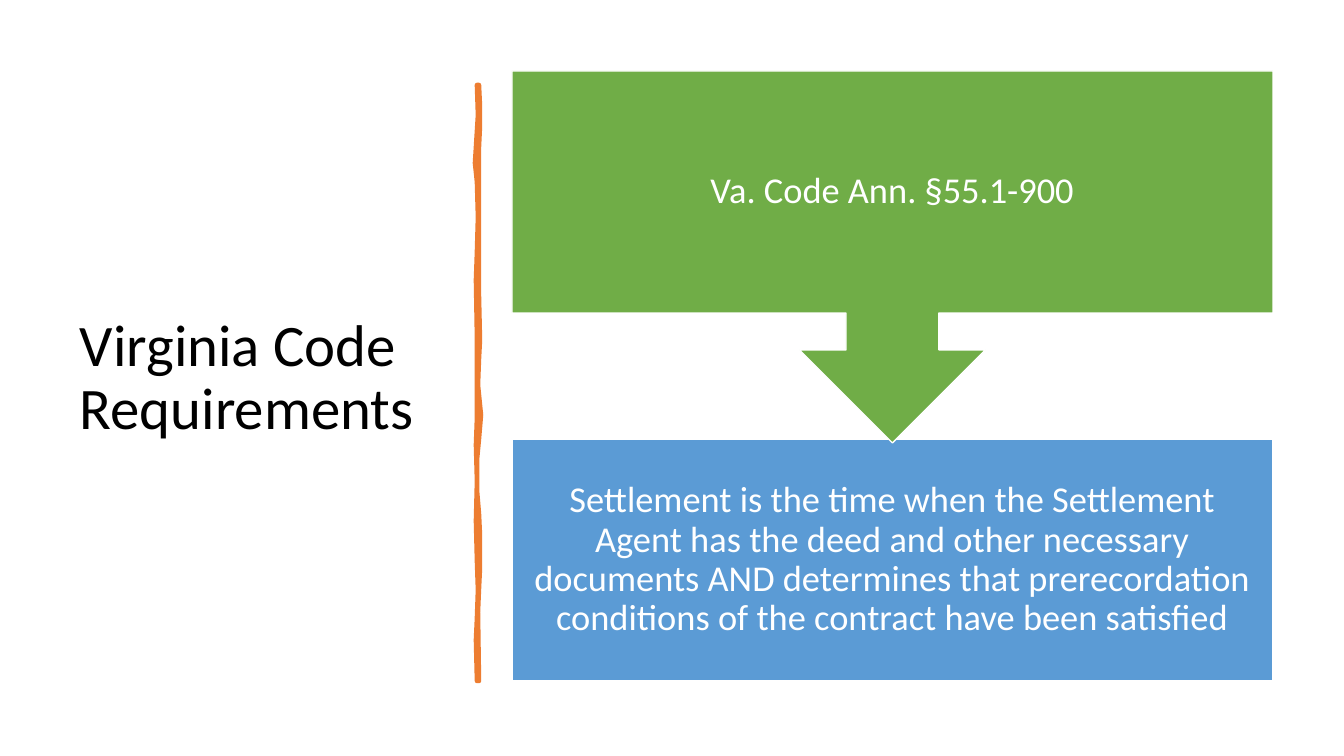
from lxml.etree import SubElement
from pptx import Presentation
from pptx.dml.color import RGBColor
from pptx.enum.shapes import MSO_SHAPE as Preset
from pptx.enum.text import MSO_ANCHOR as Anchor, PP_ALIGN as Align
from pptx.oxml.ns import qn
from pptx.util import Pt

# Content
TITLE = "Virginia Code Requirements"
CITATION = "Va. Code Ann. §55.1-900"
RULE = ("Settlement is the time when the Settlement Agent has the deed and other "
        "necessary documents AND determines that prerecordation conditions of the "
        "contract have been satisfied")

COLORS = {"title": "000000", "light": "FFFFFF", "citation": "70AD47",
          "rule": "5B9BD5", "brush": "ED7D31"}
FONT = "Calibri"

# Layout in px
EMU_PER_PX = 914400 / 100.8
SLIDE_W, SLIDE_H = 1344, 756
TOP = 71
TITLE_BOX = (70, TOP, 377, 616)
STEP_X, STEP_W, STEP_H = 512, 761, 242
CALLOUT_H = 372
RULE_Y = 439
STEP_INSET = 20

# Steps from back to front: text, preset, top, height, colour
STEPS = [
    (RULE, Preset.RECTANGLE, RULE_Y, STEP_H, "rule"),
    (CITATION, Preset.DOWN_ARROW_CALLOUT, TOP, CALLOUT_H, "citation"),
]

# Wavy edges of the brush stroke: right side downwards, left side upwards
BRUSH_RIGHT = [(479, 85), (480, 106), (480, 126), (479, 147), (479, 228),
               (479, 296), (480, 340), (479, 359), (478, 385), (481, 415),
               (479, 439), (477, 460), (477, 490), (479, 514), (480, 535),
               (480, 568), (479, 589), (478, 612), (479, 681)]
BRUSH_LEFT = [(477, 681), (476, 640), (477, 618), (478, 590), (477, 561),
              (476, 521), (477, 481), (476, 445), (477, 418), (477, 338),
              (476, 280), (477, 252), (478, 217), (477, 182), (475, 163),
              (478, 115), (477, 85)]


def px(length):
    return round(length * EMU_PER_PX)


def color(name):
    return RGBColor.from_string(COLORS[name])


def write(shape, text, size, ink, align):
    frame = shape.text_frame
    frame.word_wrap = True
    frame.vertical_anchor = Anchor.MIDDLE
    frame.text = text
    paragraph = frame.paragraphs[0]
    paragraph.alignment = align
    paragraph.line_spacing = 0.9
    font = paragraph.runs[0].font
    font.name, font.size = FONT, Pt(size)
    font.color.rgb = color(ink)


def paint(shape, fill, line, width):
    shape.shadow.inherit = False
    shape.fill.solid()
    shape.fill.fore_color.rgb = color(fill)
    shape.line.color.rgb = color(line)
    shape.line.width = Pt(width)


deck = Presentation()
deck.slide_width, deck.slide_height = px(SLIDE_W), px(SLIDE_H)
slide = deck.slides.add_slide(deck.slide_layouts[6])
shapes = slide.shapes

# Title
title = shapes.add_textbox(*map(px, TITLE_BOX))
write(title, TITLE, 42, "title", Align.LEFT)

# Brush stroke divider with rounded corners
start, *outline = BRUSH_RIGHT + BRUSH_LEFT
builder = shapes.build_freeform(*start, scale=EMU_PER_PX)
builder.add_line_segments(outline, close=True)
brush = builder.convert_to_shape()
paint(brush, "brush", "brush", 3.25)
SubElement(brush.line.fill._xPr, qn("a:round"))

# Steps
for text, preset, top, height, fill in STEPS:
    step = shapes.add_shape(preset, px(STEP_X), px(top), px(STEP_W), px(height))
    if preset == Preset.DOWN_ARROW_CALLOUT:
        step.adjustments[3] = STEP_H / CALLOUT_H
    paint(step, fill, "light", 1)
    write(step, text, 26, "light", Align.CENTER)
    frame = step.text_frame
    frame.margin_left = frame.margin_right = px(STEP_INSET)
    frame.margin_top = frame.margin_bottom = px(STEP_INSET)

deck.save("out.pptx")
